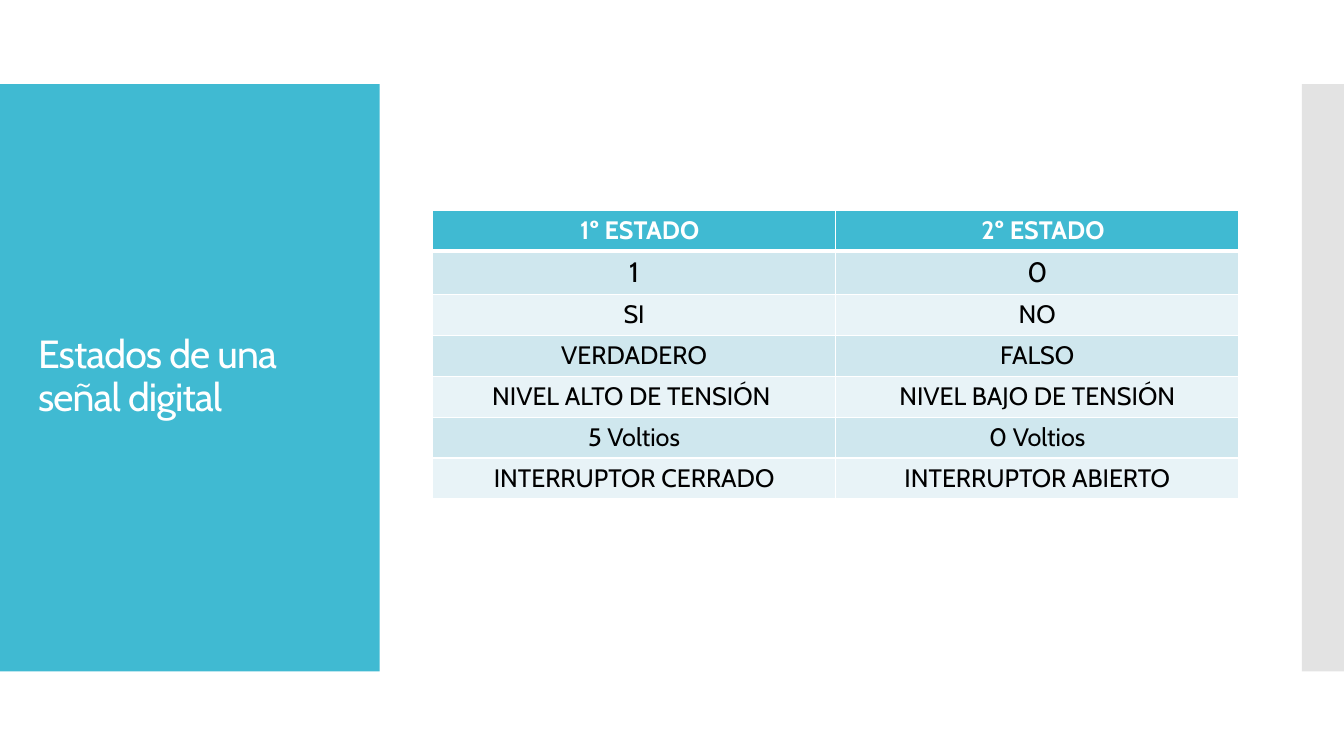
from lxml.etree import SubElement
from pptx import Presentation
from pptx.dml.color import RGBColor
from pptx.enum.shapes import MSO_SHAPE as Shape
from pptx.enum.text import MSO_ANCHOR as Anchor, PP_ALIGN as Align
from pptx.oxml.ns import qn
from pptx.util import Cm, Pt

FONT = "Cabin"
TEAL, GREY, WHITE, BLACK = "40BAD2", "C8C8C8", "FFFFFF", "000000"
BANDS = ["E8F3F7", "CFE7EE"]
STATES = [
    ("1º ESTADO", "2º ESTADO"),
    ("1", "0"),
    ("SI", "NO"),
    ("VERDADERO", "FALSO"),
    ("NIVEL ALTO DE TENSIÓN ", "NIVEL BAJO DE TENSIÓN"),
    ("5 Voltios", "0 Voltios"),
    ("INTERRUPTOR CERRADO", "INTERRUPTOR ABIERTO"),
]


def paint(fill, color):
    fill.solid()
    fill.fore_color.rgb = RGBColor.from_string(color)


def add_border(cell, side, points):
    line = SubElement(cell._tc.get_or_add_tcPr(), qn(f"a:ln{side}"), w=str(Pt(points)))
    SubElement(SubElement(line, qn("a:solidFill")), qn("a:srgbClr"), val=WHITE)


prs = Presentation()
prs.slide_width, prs.slide_height = Cm(33.87), Cm(19.05)
slide = prs.slides.add_slide(prs.slide_layouts[6])

# Side panels
for left, width, color in [(0, 9.57, TEAL), (32.81, 1.06, GREY)]:
    panel = slide.shapes.add_shape(Shape.RECTANGLE, Cm(left), Cm(2.12), Cm(width), Cm(14.8))
    panel.shadow.inherit = False
    panel.line.fill.background()
    paint(panel.fill, color)
    if color == GREY:
        tint = panel._element.spPr.find(qn("a:solidFill")).find(qn("a:srgbClr"))
        SubElement(tint, qn("a:alpha"), val="50000")

# Title
title = slide.shapes.add_textbox(Cm(0.71), Cm(3.12), Cm(8.18), Cm(12.78)).text_frame
title.word_wrap = True
title.vertical_anchor = Anchor.MIDDLE
heading = title.paragraphs[0]
heading.line_spacing = 0.9
heading_run = heading.add_run()
heading_run.text = "Estados de una señal digital"
heading_run.font._element.set("spc", "-60")
heading.font.name, heading.font.size = FONT, Pt(28)
heading.font.color.rgb = RGBColor.from_string(WHITE)

# Table of the two states
table = slide.shapes.add_table(
    len(STATES), 2, Cm(10.9), Cm(5.29), Cm(20.32), Cm(1.03 * len(STATES))
).table
for r, pair in enumerate(STATES):
    header = r == 0
    table.rows[r].height = Cm(1.03)
    for c, state in enumerate(pair):
        cell = table.cell(r, c)
        for side, points in [("L", 1), ("R", 1), ("T", 3 if r == 1 else 1), ("B", 3 if header else 1)]:
            add_border(cell, side, points)
        paint(cell.fill, TEAL if header else BANDS[r % 2])
        label = cell.text_frame.paragraphs[0]
        label.text = f"  {state}" if header else state
        label.alignment = Align.CENTER
        label.font.name = FONT
        label.font.size = Pt(20 if r == 1 else 18)
        label.font.bold = header
        label.font.color.rgb = RGBColor.from_string(WHITE if header else BLACK)

prs.save("out.pptx")
